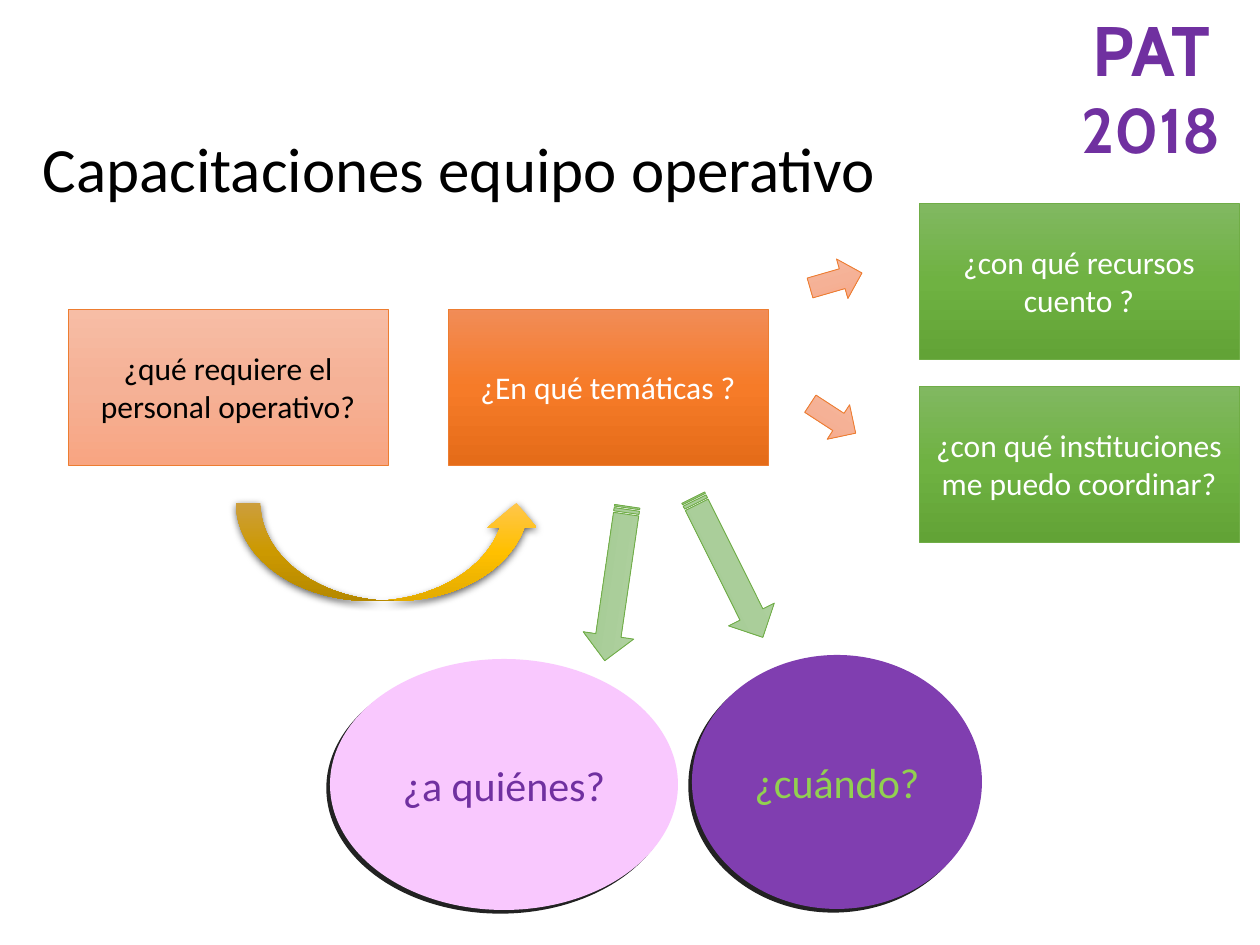
from copy import deepcopy
from dataclasses import dataclass
from typing import Optional

from lxml import etree
from pptx import Presentation
from pptx.dml.color import RGBColor
from pptx.enum.shapes import MSO_SHAPE
from pptx.enum.text import MSO_ANCHOR, PP_ALIGN
from pptx.oxml.ns import qn
from pptx.util import Emu, Pt

RECT = MSO_SHAPE.RECTANGLE
OVAL = MSO_SHAPE.OVAL
ARROW = MSO_SHAPE.RIGHT_ARROW
STRIPED = MSO_SHAPE.STRIPED_RIGHT_ARROW
CURVED = MSO_SHAPE.CURVED_UP_ARROW
CENTER, LEFT = PP_ALIGN.CENTER, PP_ALIGN.LEFT
TOP, MIDDLE = MSO_ANCHOR.TOP, MSO_ANCHOR.MIDDLE

BLACK = RGBColor(0x00, 0x00, 0x00)
WHITE = RGBColor(0xFF, 0xFF, 0xFF)
EDGE = RGBColor(0x22, 0x22, 0x22)
PURPLE = RGBColor(0x70, 0x30, 0xA0)
VIOLET = RGBColor(0x80, 0x3E, 0xB0)
PINK = RGBColor(0xF9, 0xC8, 0xFE)
LIME = RGBColor(0x92, 0xD0, 0x50)
ORANGE_LINE = RGBColor(0xED, 0x7D, 0x31)
GREEN_LINE = RGBColor(0x70, 0xAD, 0x47)

# Vertical gradients: top, middle, bottom
PEACH = (RGBColor(0xF7, 0xBD, 0xA5), RGBColor(0xF5, 0xB1, 0x96), RGBColor(0xF8, 0xA5, 0x82))
ORANGE = (RGBColor(0xF1, 0x8C, 0x57), RGBColor(0xF6, 0x7B, 0x28), RGBColor(0xE5, 0x6C, 0x19))
GREEN = (RGBColor(0x81, 0xB8, 0x61), RGBColor(0x6F, 0xB2, 0x42), RGBColor(0x62, 0xA3, 0x36))
SAGE = (RGBColor(0xB5, 0xD5, 0xA7), RGBColor(0xAA, 0xCE, 0x9A), RGBColor(0x9C, 0xC9, 0x87))
GOLD = (RGBColor(0xFF, 0xC6, 0x4B), RGBColor(0xFF, 0xC0, 0x00), RGBColor(0xE3, 0xAB, 0x00))

PX_PER_INCH = 126
BOX_W, BOX_H = 320, 156


def px(n: int) -> Emu:
    return Emu(round(n * 914400 / PX_PER_INCH))


@dataclass
class Shadow:
    color: RGBColor
    alpha: int
    blur: float
    dist: float
    angle: int


@dataclass
class Item:
    kind: int
    box: tuple[int, int, int, int]
    fill: tuple[RGBColor, ...]
    line: Optional[RGBColor] = None
    text: str = ""
    color: RGBColor = WHITE
    size: int = 18
    rotation: float = 0
    shadow: Optional[Shadow] = None


def add_run(p, text: str, size: int, color: RGBColor, name: str = "Calibri", bold: bool = False) -> None:
    r = p.add_run()
    r.text = text
    for key, value in {"size": Pt(size), "name": name, "bold": bold}.items():
        setattr(r.font, key, value)
    r.font.color.rgb = color


def paint(s, colors: tuple[RGBColor, ...]) -> None:
    """Fill with one colour, or with three evenly spaced gradient stops."""
    if len(colors) == 1:
        s.fill.solid()
        s.fill.fore_color.rgb = colors[0]
        return
    s.fill.gradient()
    s.fill.gradient_angle = 270
    stop_list = s._element.spPr.find(qn("a:gradFill")).find(qn("a:gsLst"))
    stop_list.append(deepcopy(stop_list[-1]))
    for i, (stop, color) in enumerate(zip(s.fill.gradient_stops, colors)):
        stop.position = i / 2
        stop.color.rgb = color


def add_shadow(s, shadow: Shadow) -> None:
    effects = s._element.spPr.find(qn("a:effectLst"))
    outer = etree.SubElement(effects, qn("a:outerShdw"), blurRad=str(Pt(shadow.blur)),
                             dist=str(Pt(shadow.dist)), dir=str(shadow.angle * 60000),
                             algn="ctr", rotWithShape="0")
    color = etree.SubElement(outer, qn("a:srgbClr"), val=str(shadow.color))
    etree.SubElement(color, qn("a:alpha"), val=str(shadow.alpha * 1000))


def add_item(slide, item: Item) -> None:
    s = slide.shapes.add_shape(item.kind, *map(px, item.box))
    s.rotation = item.rotation
    paint(s, item.fill)
    if item.line is None:
        s.line.fill.background()
    else:
        s.line.color.rgb = item.line
        s.line.width = Pt(0.5)
    s.shadow.inherit = False
    if item.shadow:
        add_shadow(s, item.shadow)
    if item.text:
        tf = s.text_frame
        tf.word_wrap = True
        tf.vertical_anchor = MIDDLE
        p = tf.paragraphs[0]
        p.alignment = CENTER
        add_run(p, item.text, item.size, item.color)


def add_year(slide) -> None:
    tf = slide.shapes.add_textbox(px(1042), 0, px(218), px(174)).text_frame
    tf.word_wrap = True
    p = tf.paragraphs[0]
    p.alignment = CENTER
    add_run(p, "PAT", 40, PURPLE, "Cabin", True)
    add_run(p, " 2018", 36, PURPLE, "Cabin", True)


def set_title(slide) -> None:
    s = slide.shapes.title
    box = {"left": 30, "top": 132, "width": 888, "height": 141}
    for key, value in box.items():
        setattr(s, key, px(value))
    tf = s.text_frame
    tf.word_wrap = True
    tf.vertical_anchor = TOP
    p = tf.paragraphs[0]
    p.alignment = LEFT
    p.line_spacing = 0.9
    add_run(p, "Capacitaciones equipo operativo", 36, BLACK)


RIM = Shadow(EDGE, 100, 0, 3, 135)
SOFT = Shadow(BLACK, 63, 4.5, 1.5, 90)

ITEMS = [
    # Question boxes
    Item(RECT, (68, 309, BOX_W, BOX_H), PEACH, ORANGE_LINE,
         "¿qué requiere el personal operativo?", BLACK),
    Item(RECT, (448, 309, BOX_W, BOX_H), ORANGE, ORANGE_LINE, "¿En qué temáticas ?"),
    Item(RECT, (919, 203, BOX_W, BOX_H), GREEN, GREEN_LINE, "¿con qué recursos cuento ?"),
    Item(RECT, (919, 386, BOX_W, BOX_H), GREEN, GREEN_LINE,
         "¿con qué instituciones me puedo coordinar?"),
    # Arrows between the boxes
    Item(ARROW, (809, 260, 54, 41), PEACH, ORANGE_LINE, rotation=343.9),
    Item(ARROW, (806, 398, 54, 41), PEACH, ORANGE_LINE, rotation=33),
    Item(CURVED, (236, 503, 305, 98), GOLD, shadow=SOFT),
    # Arrows down to the ovals
    Item(STRIPED, (650, 542, 156, 51), SAGE, GREEN_LINE, rotation=63.5),
    Item(STRIPED, (538, 558, 156, 51), SAGE, GREEN_LINE, rotation=98.3),
    # Ovals
    Item(OVAL, (330, 659, 348, 251), (PINK,), None, "¿a quiénes?", PURPLE, 24, shadow=RIM),
]

# The slanted oval: a larger ellipse squeezed along its diagonal
WHEN = Item(OVAL, (692, 655, 290, 254), (VIOLET,), None, "¿cuándo?", LIME, 24, shadow=RIM)


def main() -> None:
    prs = Presentation()
    prs.slide_width, prs.slide_height = px(1260), px(945)
    slide = prs.slides.add_slide(prs.slide_layouts[5])
    add_year(slide)
    set_title(slide)
    for item in [WHEN, *ITEMS]:
        add_item(slide, item)
    prs.save("out.pptx")


if __name__ == "__main__":
    main()
